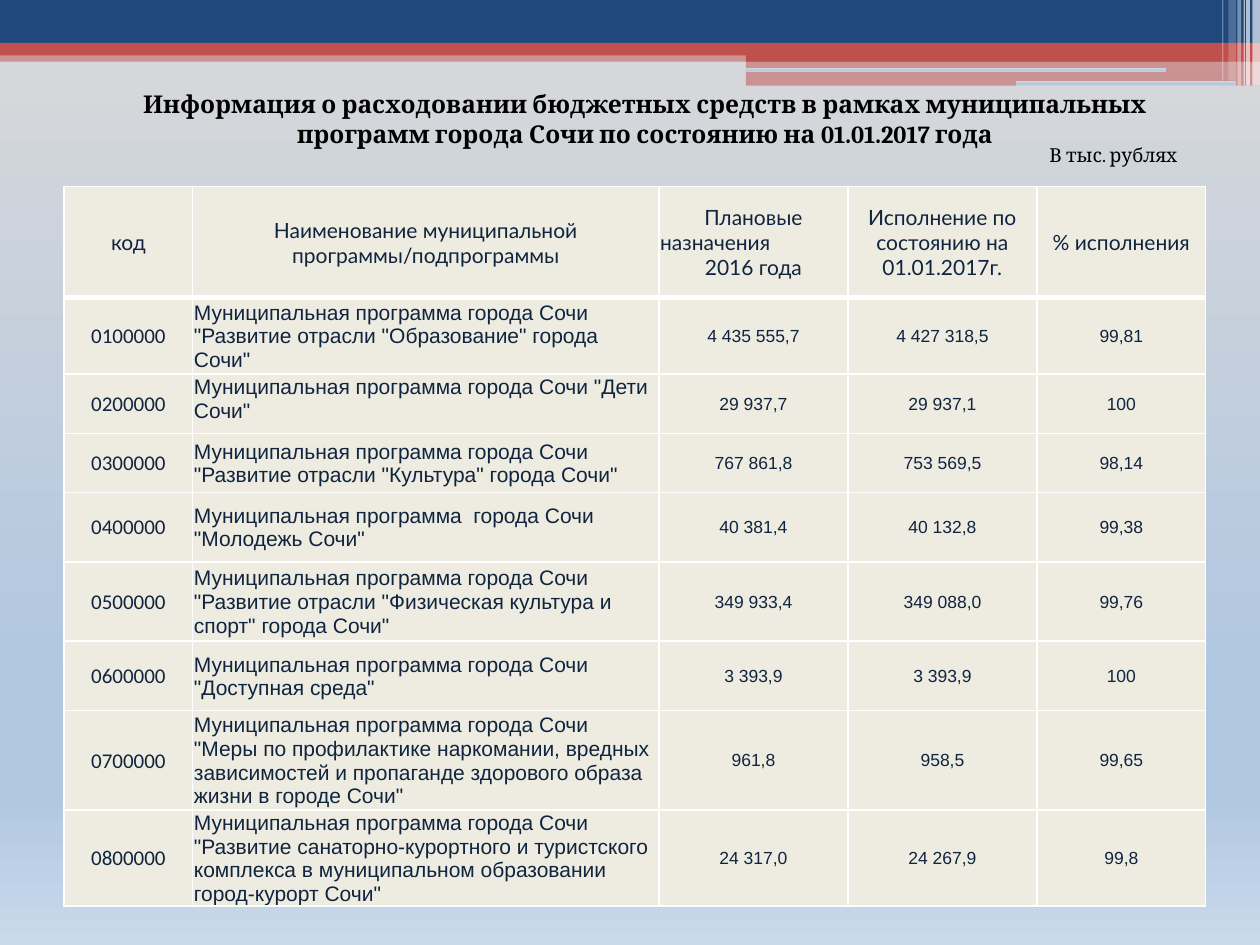
from lxml.etree import SubElement
from pptx import Presentation
from pptx.dml.color import RGBColor
from pptx.enum.shapes import MSO_SHAPE
from pptx.enum.text import MSO_ANCHOR, PP_ALIGN
from pptx.oxml.ns import qn
from pptx.util import Inches, Pt

COLORS = {
    "navy": "1F497D", "red": "C0504D", "white": "FFFFFF",
    "cell": "EEECE1", "ink": "0F243E", "black": "000000",
}
BACKDROP = [(0, "D9D9D9"), (74, "B0C6E1"), (83, "B0C6E1"), (100, "CAD9EB")]
CENTER, LEFT = PP_ALIGN.CENTER, PP_ALIGN.LEFT

# left, top, width, height, colour, opacity in percent
BANNER = [
    (0, 0.4, 10, 0.09, "red", 50),
    (0, 0, 10, 0.34, "navy", 100),
    (0, 0.34, 10, 0.1, "red", 100),
    (5.92, 0.39, 4.08, 0.1, "red", 100),
    (5.92, 0.48, 4.08, 0.2, "red", 50),
]
GAPS = [(5.91, 0.54, 3.35, 0.03), (8.06, 0.64, 1.75, 0.04)]
# left, width, height, opacity in percent
STRIPES = [
    (9.94, 0.06, 0.68, 65), (9.89, 0.03, 0.68, 65), (9.87, 0.01, 0.68, 60),
    (9.82, 0.03, 0.68, 40), (9.75, 0.06, 0.64, 20), (9.7, 0.01, 0.64, 30),
]

COLUMN_WIDTHS = [1.02, 3.7, 1.5, 1.5, 1.34]
ROW_HEIGHTS = [0.88, 0.61, 0.47, 0.47, 0.55, 0.63, 0.55, 0.79, 0.76]
HEADER = [
    "код",
    "Наименование муниципальной программы/подпрограммы",
    "Плановые\nназначения\n2016 года",
    "Исполнение по состоянию на 01.01.2017г.",
    "% исполнения",
]
PROGRAMS = [
    ("0100000", 'Муниципальная программа города Сочи "Развитие отрасли "Образование" города Сочи"',
     "4 435 555,7", "4 427 318,5", "99,81"),
    ("0200000", 'Муниципальная программа города Сочи "Дети Сочи"',
     "29 937,7", "29 937,1", "100"),
    ("0300000", 'Муниципальная программа города Сочи "Развитие отрасли "Культура" города Сочи"',
     "767 861,8", "753 569,5", "98,14"),
    ("0400000", 'Муниципальная программа  города Сочи "Молодежь Сочи"',
     "40 381,4", "40 132,8", "99,38"),
    ("0500000", 'Муниципальная программа города Сочи "Развитие отрасли '
     '"Физическая культура и спорт" города Сочи"',
     "349 933,4", "349 088,0", "99,76"),
    ("0600000", 'Муниципальная программа города Сочи "Доступная среда"',
     "3 393,9", "3 393,9", "100"),
    ("0700000", 'Муниципальная программа города Сочи "Меры по профилактике наркомании, '
     'вредных зависимостей и пропаганде здорового образа жизни в городе Сочи"',
     "961,8", "958,5", "99,65"),
    ("0800000", 'Муниципальная программа города Сочи "Развитие санаторно-курортного и '
     'туристского комплекса в муниципальном образовании город-курорт Сочи"',
     "24 317,0", "24 267,9", "99,8"),
]


def rgb(name):
    return RGBColor.from_string(COLORS[name])


def write_text(frame, text, font, size, color="ink", bold=False, align=LEFT,
               anchor=MSO_ANCHOR.TOP):
    """Fill a text frame, one paragraph per line of text."""
    frame.text = text
    frame.word_wrap = True
    frame.vertical_anchor = anchor
    for paragraph in frame.paragraphs:
        paragraph.alignment = align
        for run in paragraph.runs:
            run.font.name = font
            run.font.size = Pt(size)
            run.font.bold = bold
            run.font.color.rgb = rgb(color)


def apply_backdrop(properties):
    """Replace the solid fill inside properties by the vertical gradient."""
    solid = properties.find(qn("a:solidFill"))
    gradient = properties.makeelement(qn("a:gradFill"), {"rotWithShape": "1"})
    stops = SubElement(gradient, qn("a:gsLst"))
    for position, color in BACKDROP:
        stop = SubElement(stops, qn("a:gs"), pos=str(position * 1000))
        SubElement(stop, qn("a:srgbClr"), val=color)
    SubElement(gradient, qn("a:lin"), ang="5400000", scaled="0")
    properties.replace(solid, gradient)


def set_borders(cell, widths):
    """Draw white cell borders; widths in points go left, right, top, bottom."""
    properties = cell._tc.get_or_add_tcPr()
    for index, (side, width) in enumerate(zip("LRTB", widths)):
        line = properties.makeelement(qn(f"a:ln{side}"), {"w": str(Pt(width))})
        fill = SubElement(line, qn("a:solidFill"))
        SubElement(fill, qn("a:srgbClr"), val=COLORS["white"])
        properties.insert(index, line)


class BudgetSlide:
    heading_font, header_font = "Cambria", "Lato"
    code_font, body_font = "Calibri", "Arial"

    def __init__(self, presentation):
        self.slide = presentation.slides.add_slide(presentation.slide_layouts[5])
        self.slide.background.fill.solid()
        apply_backdrop(self.slide.element.find(f".//{qn('p:bgPr')}"))

    def bar(self, left, top, width, height, color="white", opacity=100,
            kind=MSO_SHAPE.RECTANGLE):
        shape = self.slide.shapes.add_shape(
            kind, Inches(left), Inches(top), Inches(width), Inches(height))
        shape.shadow.inherit = False
        shape.line.fill.background()
        shape.fill.solid()
        shape.fill.fore_color.rgb = rgb(color)
        if opacity < 100:
            tint = shape.element.spPr.find(f".//{qn('a:srgbClr')}")
            SubElement(tint, qn("a:alpha"), val=str(opacity * 1000))
        return shape

    def gap(self, left, top, width, height):
        shape = self.bar(left, top, width, height, kind=MSO_SHAPE.ROUNDED_RECTANGLE)
        apply_backdrop(shape.element.spPr)

    def title(self, text, left, top, width, height):
        heading = self.slide.shapes.title
        heading.left, heading.top = Inches(left), Inches(top)
        heading.width, heading.height = Inches(width), Inches(height)
        write_text(heading.text_frame, text, self.heading_font, 14,
                   color="black", bold=True, align=CENTER)

    def label(self, text, left, top, width, height):
        unit = self.slide.shapes.add_textbox(
            Inches(left), Inches(top), Inches(width), Inches(height))
        write_text(unit.text_frame, text, self.heading_font, 11, color="black")

    def table(self, left, top):
        rows = [HEADER, *PROGRAMS]
        table = self.slide.shapes.add_table(
            len(rows), len(HEADER), Inches(left), Inches(top),
            Inches(sum(COLUMN_WIDTHS)), Inches(sum(ROW_HEIGHTS))).table
        table.horz_banding = False
        for column, width in zip(table.columns, COLUMN_WIDTHS):
            column.width = Inches(width)
        for row, height in zip(table.rows, ROW_HEIGHTS):
            row.height = Inches(height)
        for r, values in enumerate(rows):
            for c, value in enumerate(values):
                self.cell(table.cell(r, c), value, r, c)
        planned = table.cell(0, 2).text_frame
        planned.paragraphs[1].alignment = LEFT
        # The short program name in row 2 sits at the top of its cell
        table.cell(2, 1).vertical_anchor = MSO_ANCHOR.TOP

    def cell(self, cell, value, r, c):
        if r == 0:
            font, size = self.header_font, 12
        else:
            font = self.code_font if c == 0 else self.body_font
            size = 12 if c < 2 else 10
        write_text(cell.text_frame, value, font, size,
                   align=LEFT if r and c == 1 else CENTER)
        cell.vertical_anchor = MSO_ANCHOR.MIDDLE
        cell.margin_left = cell.margin_right = cell.margin_top = Inches(0.01)
        cell.margin_bottom = 0
        cell.fill.solid()
        cell.fill.fore_color.rgb = rgb("cell")
        set_borders(cell, (1, 1, 3 if r == 1 else 1, 3 if r == 0 else 1))


def main():
    presentation = Presentation()
    presentation.slide_width, presentation.slide_height = Inches(10), Inches(7.5)
    budget = BudgetSlide(presentation)
    for strip in BANNER:
        budget.bar(*strip)
    for gap in GAPS:
        budget.gap(*gap)
    for left, width, height, opacity in STRIPES:
        budget.bar(left, 0, width, height, opacity=opacity)
    budget.table(0.51, 1.48)
    budget.title("Информация о расходовании бюджетных средств в рамках муниципальных "
                 "программ города Сочи по состоянию на 01.01.2017 года",
                 0.67, 0.66, 8.9, 0.57)
    budget.label("В тыс. рублях", 8.23, 1.09, 1.57, 0.29)
    presentation.save("out.pptx")


if __name__ == "__main__":
    main()
